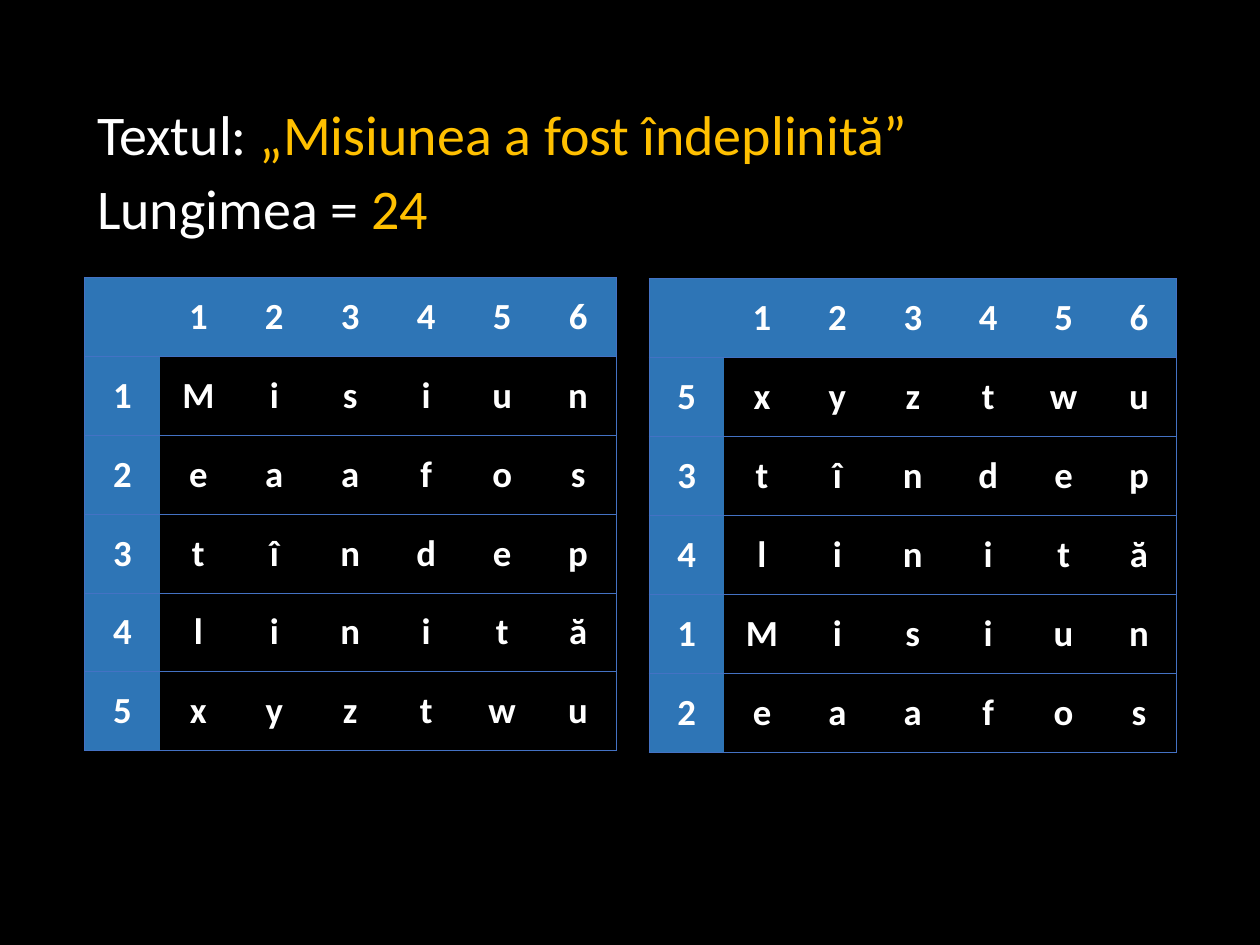
from dataclasses import dataclass

import lxml.etree
import pptx
import pptx.dml.color
import pptx.enum.text
import pptx.oxml.ns
import pptx.slide
import pptx.table
import pptx.text.text
import pptx.util

Pt = pptx.util.Pt
qn = pptx.oxml.ns.qn
RGB = pptx.dml.color.RGBColor.from_string


@dataclass(frozen=True)
class Theme:
    font: str = "Calibri"
    background: str = "000000"
    text: str = "FFFFFF"
    accent: str = "FFC000"
    header: str = "2E75B6"
    border: str = "4472C4"
    statement_size: float = 32
    grid_size: float = 21
    border_width: float = 0.5
    no_grid_style: str = "{2D5ABB26-0587-4C30-8999-92F81FD0307C}"


@dataclass(frozen=True)
class Statement:
    label: str
    value: str


@dataclass(frozen=True)
class CipherGrid:
    left: float
    top: float
    column_width: float
    row_order: tuple[int, ...]


THEME = Theme()
ROW_HEIGHT = 45.12
MESSAGE_ROWS = ("Misiun", "eaafos", "tîndep", "linită", "xyztwu")
STATEMENTS = (
    Statement("Textul: ", "„Misiunea a fost îndeplinită”"),
    Statement("Lungimea = ", "24"),
)
GRIDS = (
    CipherGrid(48.24, 158.4, 43.4, (1, 2, 3, 4, 5)),
    CipherGrid(370.8, 159.12, 43.1, (5, 3, 4, 1, 2)),
)


def write_statement(paragraph: pptx.text.text._Paragraph, statement: Statement, gap: float) -> None:
    properties = paragraph._p.get_or_add_pPr()
    properties.set("marL", "0")
    properties.set("indent", "0")
    lxml.etree.SubElement(properties, qn("a:buNone"))
    paragraph.line_spacing = 0.9
    paragraph.space_before = Pt(gap)
    paragraph.font.name = THEME.font
    paragraph.font.size = Pt(THEME.statement_size)
    for wording, color in ((statement.label, THEME.text), (statement.value, THEME.accent)):
        run = paragraph.add_run()
        run.text = wording
        run.font.color.rgb = RGB(color)


def add_statements(slide: pptx.slide.Slide) -> None:
    body = slide.placeholders[1]
    body.left, body.top, body.width, body.height = Pt(48.24), Pt(57.6), Pt(623.52), Pt(338.4)
    frame = body.text_frame
    frame.auto_size = pptx.enum.text.MSO_AUTO_SIZE.NONE
    for index, statement in enumerate(STATEMENTS):
        paragraph = frame.add_paragraph() if index else frame.paragraphs[0]
        write_statement(paragraph, statement, 7.5 if index else 0)


def add_border(cell: pptx.table._Cell, side: str) -> None:
    line = lxml.etree.SubElement(
        cell._tc.get_or_add_tcPr(), qn(f"a:ln{side}"), w=str(Pt(THEME.border_width))
    )
    fill = lxml.etree.SubElement(line, qn("a:solidFill"))
    lxml.etree.SubElement(fill, qn("a:srgbClr"), val=THEME.border)


def format_cell(cell: pptx.table._Cell, letter: str, sides: str, is_header: bool) -> None:
    cell.margin_left = cell.margin_right = Pt(5.4)
    cell.margin_top = cell.margin_bottom = Pt(2.7)
    cell.vertical_anchor = pptx.enum.text.MSO_ANCHOR.MIDDLE
    for side in sides:
        add_border(cell, side)
    if is_header:
        cell.fill.solid()
        cell.fill.fore_color.rgb = RGB(THEME.header)
    else:
        cell.fill.background()
    cell.text = letter
    paragraph = cell.text_frame.paragraphs[0]
    paragraph.alignment = pptx.enum.text.PP_ALIGN.CENTER
    paragraph.font.name = THEME.font
    paragraph.font.size = Pt(THEME.grid_size)
    paragraph.font.bold = True
    paragraph.font.color.rgb = RGB(THEME.text)


def add_cipher_grid(slide: pptx.slide.Slide, grid: CipherGrid) -> None:
    letters = [["", *"123456"]]
    letters += [[str(number), *MESSAGE_ROWS[number - 1]] for number in grid.row_order]
    row_count, column_count = len(letters), len(letters[0])
    table = slide.shapes.add_table(
        row_count, column_count, Pt(grid.left), Pt(grid.top),
        Pt(grid.column_width * column_count), Pt(ROW_HEIGHT * row_count),
    ).table
    table.horz_banding = False
    table._tbl.tblPr.find(qn("a:tableStyleId")).text = THEME.no_grid_style
    for column in table.columns:
        column.width = Pt(grid.column_width)
    for row_index, row in enumerate(letters):
        table.rows[row_index].height = Pt(ROW_HEIGHT)
        for column_index, letter in enumerate(row):
            sides = "L" if column_index == 0 else "R" if column_index == column_count - 1 else ""
            is_header = row_index == 0 or column_index == 0
            format_cell(table.cell(row_index, column_index), letter, sides + "TB", is_header)


def main() -> None:
    presentation = pptx.Presentation()
    presentation.slide_width, presentation.slide_height = Pt(720), Pt(540)
    slide = presentation.slides.add_slide(presentation.slide_layouts[1])
    slide.background.fill.solid()
    slide.background.fill.fore_color.rgb = RGB(THEME.background)
    unused_title = slide.shapes.title.element
    unused_title.getparent().remove(unused_title)
    add_statements(slide)
    for grid in GRIDS:
        add_cipher_grid(slide, grid)
    presentation.save("out.pptx")


if __name__ == "__main__":
    main()
